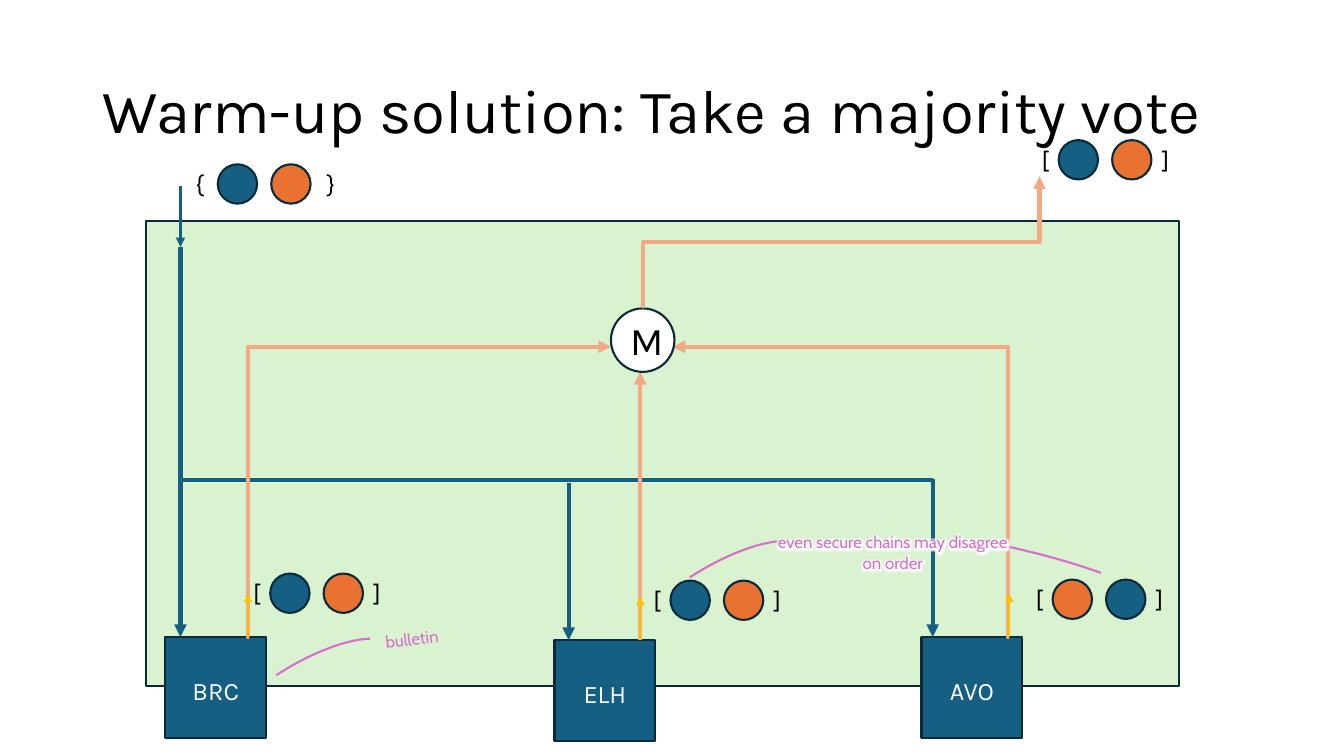
from lxml.etree import SubElement
from pptx import Presentation
from pptx.dml.color import RGBColor
from pptx.enum.shapes import MSO_CONNECTOR, MSO_SHAPE
from pptx.enum.text import MSO_ANCHOR, PP_ALIGN
from pptx.oxml.ns import qn
from pptx.util import Emu, Pt

PX = 9144  # 100 px to the inch
BLACK = RGBColor(0x00, 0x00, 0x00)
WHITE = RGBColor(0xFF, 0xFF, 0xFF)
NAVY = RGBColor(0x09, 0x2A, 0x39)
BLUE = RGBColor(0x15, 0x60, 0x82)
ORANGE = RGBColor(0xE9, 0x71, 0x32)
PEACH = RGBColor(0xF2, 0xAA, 0x84)
GOLD = RGBColor(0xFF, 0xC0, 0x00)
GREEN = RGBColor(0xD9, 0xF2, 0xD0)
PINK = RGBColor(0xD8, 0x6E, 0xCC)


def px(*lengths):
    return [Emu(length * PX) for length in lengths]


def write_text(frame, text, size=18, font="Karla", color=BLACK, align=None,
               anchor=MSO_ANCHOR.TOP, wrap=True):
    frame.word_wrap = wrap
    frame.vertical_anchor = anchor
    para = frame.paragraphs[0]
    para.alignment = align
    span = para.add_run()
    span.text = text
    span.font.size = Pt(size)
    span.font.name = font
    span.font.color.rgb = color
    return span


def add_label(page, box, text, rotation=0, **text_format):
    label = page.shapes.add_textbox(*px(*box))
    label.rotation = rotation
    return write_text(label.text_frame, text, **text_format)


def add_figure(page, kind, box, fill=None, line=NAVY):
    figure = page.shapes.add_shape(kind, *px(*box))
    figure.shadow.inherit = False
    if fill is None:
        figure.fill.background()
    else:
        figure.fill.solid()
        figure.fill.fore_color.rgb = fill
    figure.line.color.rgb = line
    figure.line.width = Pt(1.5)
    return figure


def add_arc(page, box, rotation, end):
    arc = add_figure(page, MSO_SHAPE.ARC, box, line=PINK)
    arc.adjustments[0] = 162
    arc.adjustments[1] = end
    arc.rotation = rotation


def add_line(page, start, end, color, width=3, arrow=True, kind=MSO_CONNECTOR.STRAIGHT):
    line = page.shapes.add_connector(kind, *px(*start, *end))
    line.line.color.rgb = color
    line.line.width = Pt(width)
    properties = line._element.spPr
    if arrow:
        SubElement(properties.find(qn("a:ln")), qn("a:tailEnd"), type="triangle")
    SubElement(properties, qn("a:effectLst"))
    return properties


def add_elbow(page, start, end, bend, upright=False):
    """Bend is in thousandths of the way; upright leaves the start vertically."""
    if upright:  # lay the path on its side, then turn it a quarter
        half_x, half_y = (end[0] - start[0]) / 2, (end[1] - start[1]) / 2
        middle_x, middle_y = start[0] + half_x, start[1] + half_y
        start = round(middle_x - half_y), round(middle_y + half_x)
        end = round(middle_x + half_y), round(middle_y - half_x)
    properties = add_line(page, start, end, PEACH, kind=MSO_CONNECTOR.ELBOW)
    if upright:
        properties.find(qn("a:xfrm")).set("rot", str(90 * 60000))
    guides = properties.find(qn("a:prstGeom")).get_or_add_avLst()
    SubElement(guides, qn("a:gd"), name="adj1", fmla=f"val {bend * 100}")


def add_title(page, box, text):
    title = page.shapes.title
    title.left, title.top, title.width, title.height = px(*box)
    write_text(title.text_frame, text, size=44, align=PP_ALIGN.LEFT,
               anchor=MSO_ANCHOR.MIDDLE)
    title.text_frame.paragraphs[0].line_spacing = 0.9


def add_chain(page, left, top, name):
    add_figure(page, MSO_SHAPE.RECTANGLE, (left, top, 100, 100), BLUE)
    add_label(page, (left + 10, top + 33, 80, 40), name, color=WHITE,
              align=PP_ALIGN.CENTER)


def add_messages(page, left, top, colors=(BLUE, ORANGE), brackets="[]", spread=0):
    """Two message discs between brackets; left and top are the first disc's."""
    for index, color in enumerate(colors):
        add_figure(page, MSO_SHAPE.OVAL, (left + 53 * index, top, 39, 39), color)
    for bracket, offset in zip(brackets, (-27 - spread, 93 + spread)):
        add_label(page, (left + offset, top - 1, 28, 40), bracket, wrap=False)


def add_broadcast(page, chains):
    """Input goes down and along a bus to every chain."""
    add_line(page, (179, 185), (179, 245), BLUE, width=2.25)
    for x, start, (_, top, _) in zip((179, 564, 925), (245, 479, 475), chains):
        add_line(page, (x, start), (x, top), BLUE)
    add_line(page, (179, 476), (925, 476), BLUE, arrow=False)


def add_vote(page):
    """Chains report to the majority node, which sends the output."""
    add_line(page, (635, 635), (635, 369), PEACH)
    add_elbow(page, (247, 632), (606, 344), -3)
    add_elbow(page, (1001, 632), (667, 344), 4)
    node = add_figure(page, MSO_SHAPE.OVAL, (606, 306, 63, 63), WHITE)
    write_text(node.text_frame, "M", size=28, align=PP_ALIGN.CENTER,
               anchor=MSO_ANCHOR.MIDDLE)
    add_elbow(page, (638, 306), (1031, 175), 500, upright=True)


def add_order_remark(page):
    add_arc(page, (593, 566, 228, 84), 327, 208.5)
    add_arc(page, (791, 539, 377, 80), 11.5, 205.87)
    span = add_label(page, (754, 523, 263, 50), "even secure chains may disagree on order",
                     size=12, font="Cabin", color=PINK, align=PP_ALIGN.CENTER)
    # White glow around the letters, placed right after their fill
    run_format = span.font._element
    effects = SubElement(run_format, qn("a:effectLst"))
    glow = SubElement(effects, qn("a:glow"), rad=str(Pt(8)))
    SubElement(glow, qn("a:srgbClr"), val=str(WHITE))
    run_format.find(qn("a:solidFill")).addnext(effects)


def add_bulletin_remark(page):
    add_arc(page, (183, 663, 228, 84), 327, 208.5)
    add_label(page, (326, 619, 165, 30), "bulletin", rotation=353, size=12,
              font="Cabin", color=PINK, align=PP_ALIGN.CENTER)


def build_page(deck):
    page = deck.slides.add_slide(deck.slide_layouts[5])
    add_title(page, (92, 40, 1150, 145), "Warm-up solution: Take a majority vote")
    add_figure(page, MSO_SHAPE.RECTANGLE, (145, 219, 1024, 462), GREEN)

    # Chains and the arrows between them
    chains = [(164, 632, "BRC"), (550, 635, "ELH"), (914, 632, "AVO")]
    for chain in chains:
        add_chain(page, *chain)
    add_broadcast(page, chains)
    add_vote(page)

    # Message sets: input, three bulletins, output
    add_messages(page, 216, 163, brackets="{}", spread=5)
    add_messages(page, 268, 569)
    add_messages(page, 665, 576)
    add_messages(page, 1044, 575, colors=(ORANGE, BLUE))
    add_messages(page, 1050, 139)

    # Remarks and the short bulletin arrows
    add_order_remark(page)
    for x, (_, top, _) in zip((246, 635, 1001), chains):
        add_line(page, (x, top), (x, top - 43), GOLD, width=1.5)
    add_bulletin_remark(page)


def main():
    deck = Presentation()
    deck.slide_width, deck.slide_height = px(1333, 750)
    build_page(deck)
    deck.save("out.pptx")


if __name__ == "__main__":
    main()
